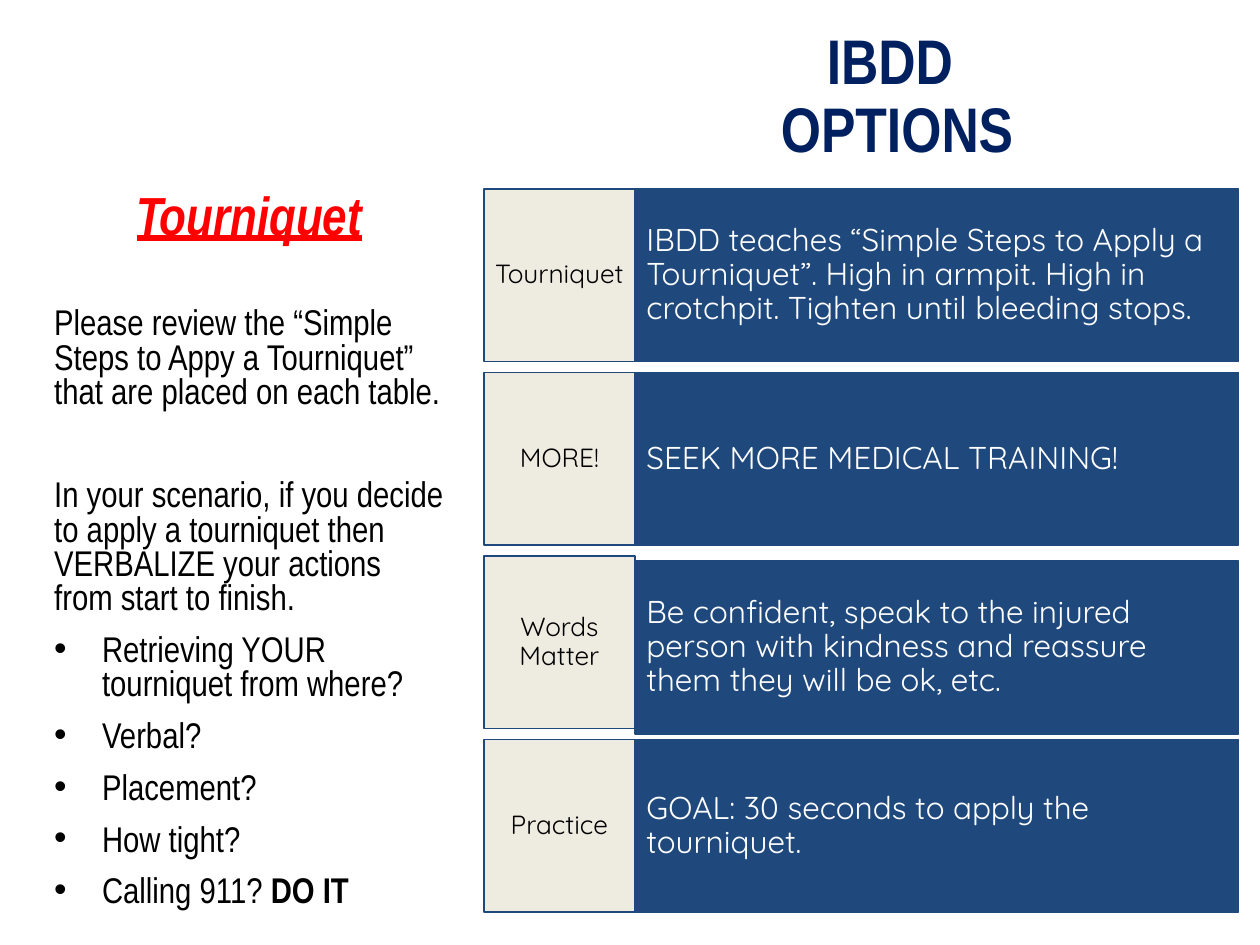
from dataclasses import dataclass

from lxml.etree import SubElement
from pptx import Presentation
from pptx.dml.color import RGBColor
from pptx.enum.shapes import MSO_SHAPE
from pptx.enum.text import MSO_ANCHOR, MSO_AUTO_SIZE, PP_ALIGN
from pptx.oxml.ns import qn
from pptx.util import Inches, Pt

COLUMNS, ROWS = 100, 75
WIDTH, HEIGHT = Inches(10), Inches(7.5)
NAVY, BLUE, CREAM = "002060", "1F497D", "EEECE1"
RED, BLACK, WHITE = "FF0000", "000000", "FFFFFF"

QUESTIONS = ["Retrieving YOUR tourniquet from where?", "Verbal?", "Placement?",
             "How tight?", "Calling 911? "]
# Label, message, and how far the message panel sits below its label
OPTIONS = [
    ("Tourniquet", "IBDD teaches “Simple Steps to Apply a Tourniquet”. High in armpit. "
                   "High in crotchpit. Tighten until bleeding stops.", 0),
    ("MORE!", "SEEK MORE MEDICAL TRAINING!", 0),
    ("Words Matter", "Be confident, speak to the injured person with kindness and "
                     "reassure them they will be ok, etc.", 0.4),
    ("Practice", "GOAL: 30 seconds to apply the tourniquet.", 0),
]


@dataclass
class Box:
    """An area measured in grid columns and rows."""
    left: float
    top: float
    width: float
    height: float

    def lengths(self):
        return (int(self.left * WIDTH / COLUMNS), int(self.top * HEIGHT / ROWS),
                int(self.width * WIDTH / COLUMNS), int(self.height * HEIGHT / ROWS))


def colour(hex_string):
    return RGBColor.from_string(hex_string)


def format_runs(para, size, name, hex_string, bold=False):
    for span in para.runs:
        span.font.size = Pt(size)
        span.font.name = name
        span.font.bold = bold
        span.font.color.rgb = colour(hex_string)


def move_placeholder(placeholder, box, anchor):
    placeholder.left, placeholder.top, placeholder.width, placeholder.height = box.lengths()
    frame = placeholder.text_frame
    frame.word_wrap = True
    frame.auto_size = MSO_AUTO_SIZE.NONE
    frame.vertical_anchor = anchor
    return frame


def set_bullet(para, character=None, indent=0):
    properties = para._p.get_or_add_pPr()
    properties.set("marL", str(Inches(indent)))
    properties.set("indent", str(-Inches(indent)))
    if character:
        SubElement(properties, qn("a:buChar"), char=character)
    else:
        SubElement(properties, qn("a:buNone"))


def place_title(page, box):
    frame = move_placeholder(page.shapes.title, box, MSO_ANCHOR.BOTTOM)
    para = frame.paragraphs[0]
    para.text = "IBDD \vOPTIONS"
    para.alignment = PP_ALIGN.CENTER
    para.line_spacing = 0.9
    format_runs(para, 36, "Arial Narrow", NAVY, bold=True)


def place_instructions(page, box):
    frame = move_placeholder(page.placeholders[1], box, MSO_ANCHOR.TOP)

    def add_para(text, before, bullet=None, indent=0):
        para = frame.add_paragraph() if frame.text else frame.paragraphs[0]
        para.text = text
        set_bullet(para, bullet, indent)
        para.line_spacing = 0.8
        para.space_before = Pt(before)
        para.alignment = PP_ALIGN.LEFT
        format_runs(para, 20.4, "Arial Narrow", BLACK)
        return para

    # Heading
    heading = add_para("Tourniquet", 0)
    heading.alignment = PP_ALIGN.CENTER
    format_runs(heading, 30.6, "Arial Narrow", RED, bold=True)
    heading.runs[0].font.italic = True
    heading.runs[0].font.underline = True

    # Instructions and questions
    add_para("Please review the “Simple Steps to Appy a Tourniquet” "
             "that are placed on each table.", 36)
    add_para("In your scenario, if you decide to apply a tourniquet then VERBALIZE "
             "your actions from start to finish.", 39.5)
    for question in QUESTIONS:
        para = add_para(question, 10, "•", 0.38)

    # Emphasis at the end of the last question
    para.add_run().text = "DO IT"
    format_runs(para, 20.4, "Arial Narrow", BLACK)
    para.runs[-1].font.bold = True


def place_panel(page, box, text, fill, text_colour, size, alignment, insets):
    panel = page.shapes.add_shape(MSO_SHAPE.RECTANGLE, *box.lengths())
    panel.shadow.inherit = False
    panel.fill.solid()
    panel.fill.fore_color.rgb = colour(fill)
    panel.line.color.rgb = colour(BLUE)
    panel.line.width = Pt(1)
    frame = panel.text_frame
    frame.word_wrap = True
    frame.vertical_anchor = MSO_ANCHOR.MIDDLE
    frame.margin_left = frame.margin_right = Inches(insets[0])
    frame.margin_top = frame.margin_bottom = Inches(insets[1])
    para = frame.paragraphs[0]
    para.text = text
    para.alignment = alignment
    para.line_spacing = 0.9
    format_runs(para, size, "Quicksand", text_colour)


def place_options(page, box, label_width=12, gap=0.87):
    height = (box.height - gap * (len(OPTIONS) - 1)) / len(OPTIONS)
    for index, (label, message, drop) in enumerate(OPTIONS):
        top = box.top + index * (height + gap)
        message_box = Box(box.left + label_width, top + drop, box.width - label_width, height)
        label_box = Box(box.left, top, label_width, height)
        place_panel(page, message_box, message, BLUE, WHITE, 18, PP_ALIGN.LEFT, (0.09, 0.35))
        place_panel(page, label_box, label, CREAM, BLACK, 15, PP_ALIGN.CENTER, (0.06, 0.14))


def main():
    deck = Presentation()
    deck.slide_width, deck.slide_height = WIDTH, HEIGHT
    page = deck.slides.add_slide(deck.slide_layouts[1])
    place_title(page, Box(58.3, 1.7, 25.8, 12))
    place_instructions(page, Box(3.3, 14.9, 33, 57.6))
    place_options(page, Box(38.4, 15, 59.9, 57.4))
    deck.save("out.pptx")


if __name__ == "__main__":
    main()
